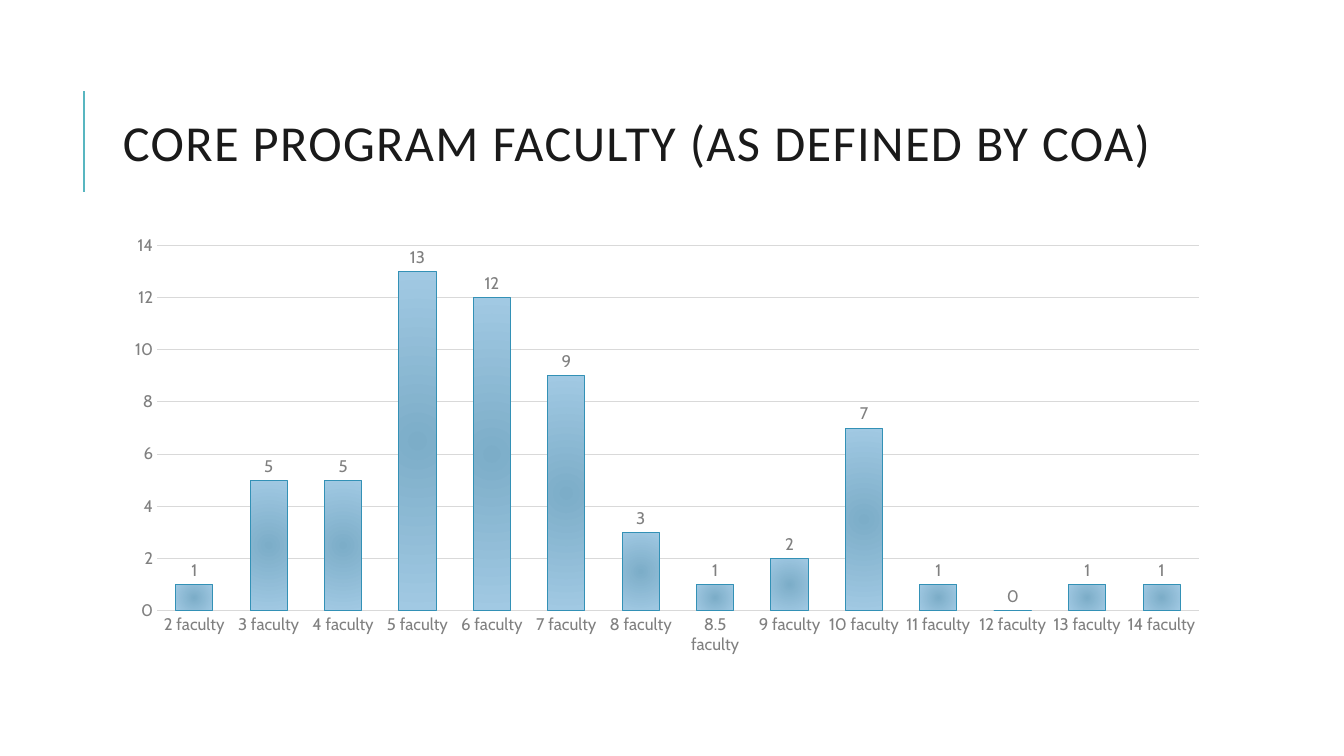
from lxml.etree import SubElement
from pptx import Presentation
from pptx.chart.data import CategoryChartData
from pptx.dml.color import RGBColor
from pptx.enum.chart import XL_CHART_TYPE, XL_LABEL_POSITION, XL_TICK_MARK
from pptx.enum.shapes import MSO_CONNECTOR
from pptx.enum.text import MSO_ANCHOR
from pptx.oxml.ns import qn
from pptx.util import Inches, Pt

GREY, PALE_GREY = "808080", "D9D9D9"


def color(hex_string):
    return RGBColor.from_string(hex_string)


def format_text(font, *, size=12, name="Cabin", fill=GREY):
    font.size = Pt(size)
    font.name = name
    font.bold = False
    font.color.rgb = color(fill)


presentation = Presentation()
presentation.slide_width = Inches(13.33)
presentation.slide_height = Inches(7.5)
slide = presentation.slides.add_slide(presentation.slide_layouts[6])

# Accent line beside the title
accent = slide.shapes.add_connector(
    MSO_CONNECTOR.STRAIGHT, Inches(0.83), Inches(1.9), Inches(0.83), Inches(0.9))
accent.line.color.rgb = color("58B6C0")
accent.line.width = Pt(1.5)
SubElement(accent._element.spPr, qn("a:effectLst"))

# Title
title = slide.shapes.add_textbox(Inches(1.12), Inches(0.64), Inches(11.74), Inches(1.64))
title.text_frame.word_wrap = True
title.text_frame.vertical_anchor = MSO_ANCHOR.MIDDLE
paragraph = title.text_frame.paragraphs[0]
paragraph.line_spacing = 0.8
run = paragraph.add_run()
run.text = "CORE PROGRAM FACULTY (AS DEFINED BY COA)"
format_text(run.font, size=36, name="Calibri", fill="1A1A1A")
run._r.get_or_add_rPr().set("spc", "100")

# Chart of programs by number of core faculty
programs_by_faculty = {
    "2": 1, "3": 5, "4": 5, "5": 13, "6": 12, "7": 9, "8": 3,
    "8.5": 1, "9": 2, "10": 7, "11": 1, "12": 0, "13": 1, "14": 1,
}
chart_data = CategoryChartData()
chart_data.categories = [f"{count} faculty" for count in programs_by_faculty]
chart_data.add_series("Series 1", programs_by_faculty.values())
chart = slide.shapes.add_chart(
    XL_CHART_TYPE.COLUMN_CLUSTERED,
    Inches(1.12), Inches(2.25), Inches(10.99), Inches(4.33), chart_data).chart
chart.has_legend = False
chart.has_title = False
format_text(chart.font, size=10, fill="000000")

# Axes and gridlines
for axis in (chart.category_axis, chart.value_axis):
    axis.major_tick_mark = XL_TICK_MARK.NONE
    axis.minor_tick_mark = XL_TICK_MARK.NONE
    format_text(axis.tick_labels.font)
chart.value_axis.minimum_scale = 0
chart.value_axis.maximum_scale = 14
chart.value_axis.major_unit = 2
chart.value_axis.has_major_gridlines = True
chart.value_axis.format.line.fill.background()
for line in (chart.category_axis.format.line, chart.value_axis.major_gridlines.format.line):
    line.color.rgb = color(PALE_GREY)
    line.width = Pt(0.75)

# Columns
plot = chart.plots[0]
plot.vary_by_categories = False
plot.gap_width = 100
plot.overlap = -24
series = plot.series[0]
series.format.line.color.rgb = color("3391B6")
series.format.line.width = Pt(0.75)

# Radial gradient, darker in the centre
fill = series.format.fill
fill.gradient()
for stop, shade in zip(fill.gradient_stops, ("7CADC8", "A1C9E3")):
    stop.color.rgb = color(shade)
gradient = series._element.find(qn("c:spPr")).find(qn("a:gradFill"))
gradient.remove(gradient.find(qn("a:lin")))
circle = SubElement(gradient, qn("a:path"), {"path": "circle"})
SubElement(circle, qn("a:fillToRect"), dict.fromkeys("ltrb", "100000"))

# Value labels
labels = series.data_labels
labels.show_value = True
labels.position = XL_LABEL_POSITION.OUTSIDE_END
format_text(labels.font)

presentation.save("out.pptx")
